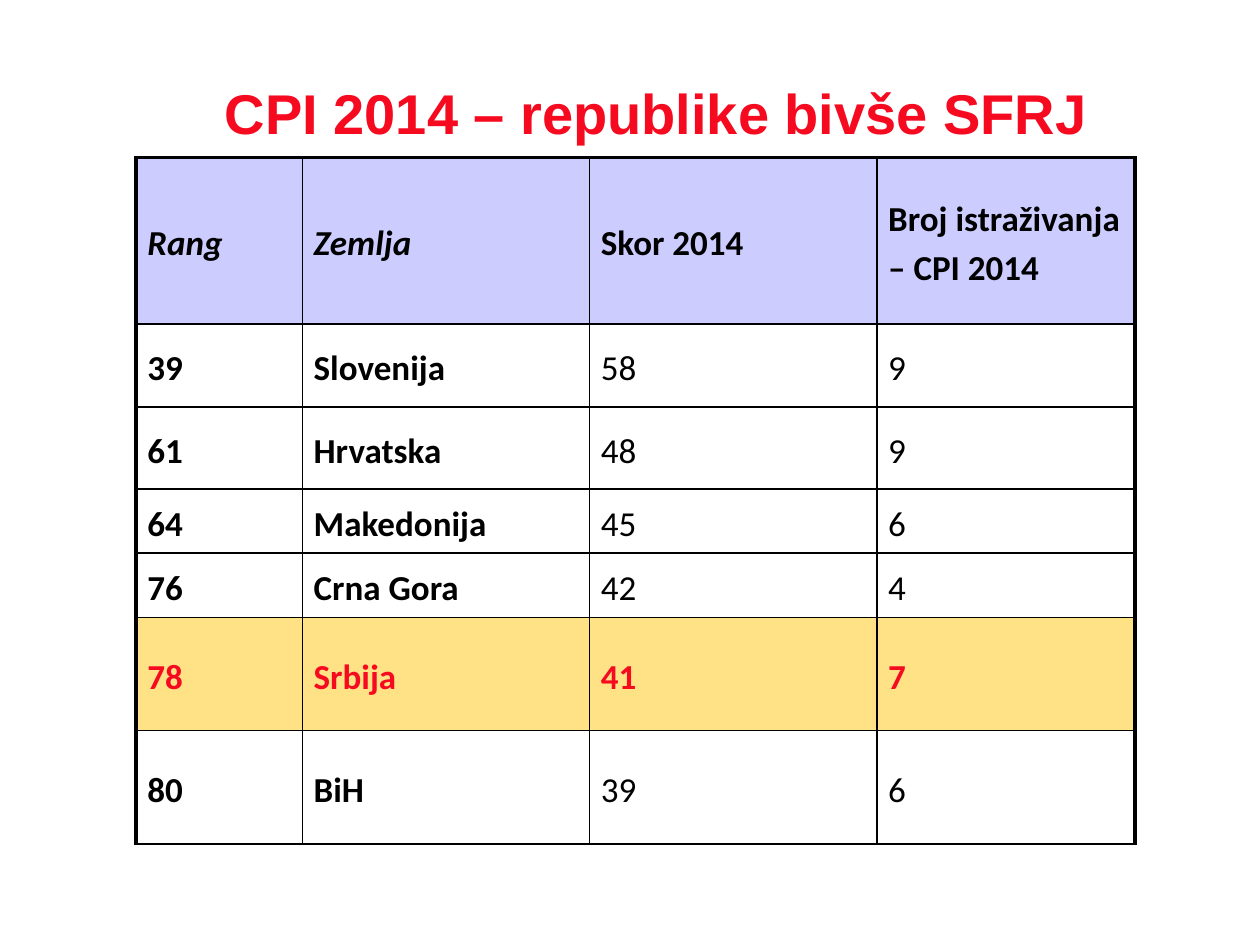
from dataclasses import dataclass

from lxml import etree
from pptx import Presentation
from pptx import util as u
from pptx.dml.color import RGBColor
from pptx.enum import text
from pptx.oxml import ns


@dataclass(frozen=True)
class Theme:
    ink: str = "000000"
    accent: str = "F60A20"
    header_fill: str = "CCCCFF"
    highlight_fill: str = "FFD44B"
    highlight_opacity: int = 67
    title_font: str = "Arial"
    table_font: str = "Calibri"
    title_size: int = 32
    table_size: int = 20
    outer_line: float = 2.25
    inner_line: float = 1


THEME = Theme()
TITLE = "CPI 2014 – republike bivše SFRJ"
ROWS = [
    ("Rang", "Zemlja", "Skor 2014", "Broj istraživanja – CPI 2014"),
    ("39", "Slovenija", "58", "9"),
    ("61", "Hrvatska", "48", "9"),
    ("64", "Makedonija", "45", "6"),
    ("76", "Crna Gora", "42", "4"),
    ("78", "Srbija", "41", "7"),
    ("80", "BiH", "39", "6"),
]
HIGHLIGHT_ROW = 5
COLUMN_WIDTHS = (1.32, 2.28, 2.28, 2.05)
ROW_HEIGHTS = (1.32, 0.66, 0.65, 0.51, 0.51, 0.9, 0.9)


def style_font(font, name, size, color, bold=False, italic=False):
    font.name, font.size = name, u.Pt(size)
    font.bold, font.italic = bold, italic
    font.color.rgb = RGBColor.from_string(color)


def add_title(slide):
    box = slide.shapes.add_textbox(*map(u.Inches, (0.7, 0.52, 9.02, 0.79)))
    frame = box.text_frame
    frame.word_wrap = True
    frame.text = TITLE
    paragraph = frame.paragraphs[0]
    paragraph.alignment = text.PP_ALIGN.CENTER
    paragraph.line_spacing = u.Pt(42)
    style_font(paragraph.runs[0].font, THEME.title_font, THEME.title_size,
               THEME.accent, bold=True)


def add_border(cell, side, width):
    properties = cell._tc.get_or_add_tcPr()
    line = etree.SubElement(properties, ns.qn(f"a:ln{side}"), w=str(u.Pt(width)))
    fill = etree.SubElement(line, ns.qn("a:solidFill"))
    etree.SubElement(fill, ns.qn("a:srgbClr"), val=THEME.ink)


def fill_cell(cell, color, opacity=100):
    cell.fill.solid()
    cell.fill.fore_color.rgb = RGBColor.from_string(color)
    if opacity < 100:
        color_element = cell._tc.tcPr.find(".//" + ns.qn("a:solidFill") + "[last()]")
        color_element = cell._tc.tcPr.find(ns.qn("a:solidFill"))[0]
        etree.SubElement(color_element, ns.qn("a:alpha"), val=str(opacity * 1000))


def format_cell(cell, row, column):
    """Apply borders, fill and type according to the place in the table."""
    outer = {"L": column == 0, "R": column == len(COLUMN_WIDTHS) - 1,
             "T": row == 0, "B": False}
    for side, is_outer in outer.items():
        add_border(cell, side, THEME.outer_line if is_outer else THEME.inner_line)

    header, highlight = row == 0, row == HIGHLIGHT_ROW
    if header:
        fill_cell(cell, THEME.header_fill)
    elif highlight:
        fill_cell(cell, THEME.highlight_fill, THEME.highlight_opacity)
    else:
        cell.fill.background()

    cell.vertical_anchor = text.MSO_ANCHOR.MIDDLE
    cell.margin_left = cell.margin_right = u.Inches(0.09)
    cell.margin_top = cell.margin_bottom = u.Inches(0.05)
    paragraph = cell.text_frame.paragraphs[0]
    paragraph.line_spacing = 1.15
    paragraph.space_after = u.Pt(10)
    style_font(paragraph.runs[0].font, THEME.table_font, THEME.table_size,
               THEME.accent if highlight else THEME.ink,
               bold=header or highlight or column < 2,
               italic=header and column < 2)


def add_ranking_table(slide):
    frame = slide.shapes.add_table(
        len(ROWS), len(COLUMN_WIDTHS), u.Inches(1.08), u.Inches(1.25),
        u.Inches(sum(COLUMN_WIDTHS)), u.Inches(sum(ROW_HEIGHTS)))
    table = frame.table
    table.first_row = table.horz_banding = False
    for column, width in zip(table.columns, COLUMN_WIDTHS):
        column.width = u.Inches(width)
    for row, height in zip(table.rows, ROW_HEIGHTS):
        row.height = u.Inches(height)
    for row, values in enumerate(ROWS):
        for column, value in enumerate(values):
            cell = table.cell(row, column)
            cell.text_frame.text = value
            format_cell(cell, row, column)


def main():
    presentation = Presentation()
    presentation.slide_width, presentation.slide_height = u.Inches(10), u.Inches(7.5)
    slide = presentation.slides.add_slide(presentation.slide_layouts[6])
    add_title(slide)
    add_ranking_table(slide)
    presentation.save("out.pptx")


if __name__ == "__main__":
    main()
